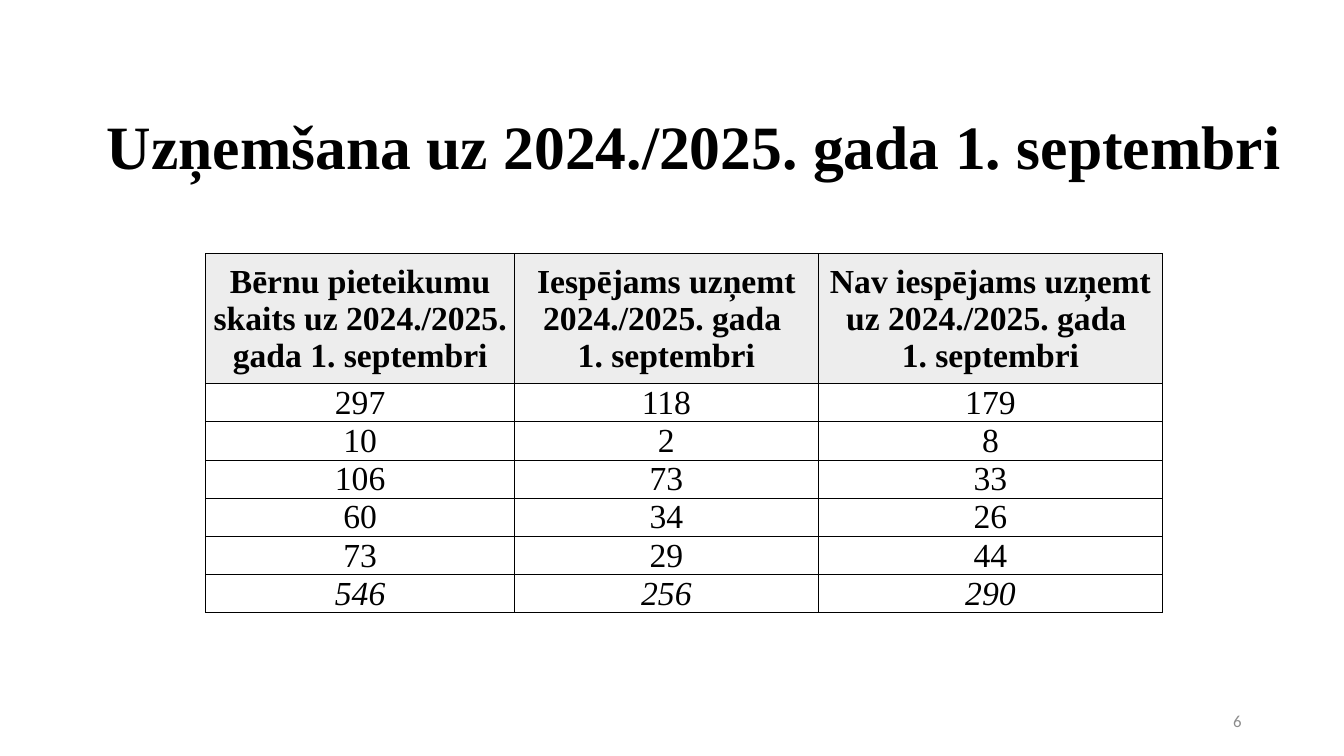
import pptx
import pptx.dml.color
import pptx.enum.text
import pptx.oxml
import pptx.oxml.ns
import pptx.util

Pt = pptx.util.Pt
ALIGN = pptx.enum.text.PP_ALIGN
MIDDLE = pptx.enum.text.MSO_ANCHOR.MIDDLE
BLACK = pptx.dml.color.RGBColor(0x00, 0x00, 0x00)
GREY = pptx.dml.color.RGBColor(0x8C, 0x8C, 0x8C)
HEADER_FILL = pptx.dml.color.RGBColor(0xED, 0xED, 0xED)
SERIF = "Times New Roman"
SANS = "Calibri"

HEADINGS = [
    "Bērnu pieteikumu skaits uz 2024./2025. gada 1. septembri",
    "Iespējams uzņemt 2024./2025. gada \n1. septembri",
    "Nav iespējams uzņemt uz 2024./2025. gada \v1. septembri",
]
ADMISSIONS = [
    (297, 118, 179),
    (10, 2, 8),
    (106, 73, 33),
    (60, 34, 26),
    (73, 29, 44),
]
TOTALS = (546, 256, 290)


def write(frame, text, font=SERIF, size=24, color=BLACK, bold=False,
          italic=False, align=ALIGN.CENTER, spacing=None):
    frame.text = text
    frame.word_wrap = True
    for paragraph in frame.paragraphs:
        paragraph.alignment = align
        paragraph.line_spacing = spacing
        for run in paragraph.runs:
            run.font.name = font
            run.font.size = Pt(size)
            run.font.color.rgb = color
            run.font.bold = bold
            run.font.italic = italic


class SlideBuilder:
    def __init__(self, presentation):
        self.slide = presentation.slides.add_slide(presentation.slide_layouts[5])
        self.border_width = Pt(0.5)

    def title(self, text, left, top, width, height):
        heading = self.slide.shapes.title
        heading.left, heading.top = Pt(left), Pt(top)
        heading.width, heading.height = Pt(width), Pt(height)
        write(heading.text_frame, text, size=44, bold=True,
              align=ALIGN.LEFT, spacing=0.9)
        heading.text_frame.vertical_anchor = MIDDLE
        heading.text_frame.auto_size = pptx.enum.text.MSO_AUTO_SIZE.NONE

    def label(self, text, left, top, width, height, **style):
        box = self.slide.shapes.add_textbox(Pt(left), Pt(top), Pt(width), Pt(height))
        write(box.text_frame, text, **style)
        box.text_frame.vertical_anchor = MIDDLE

    def border(self, cell):
        properties = cell._tc.get_or_add_tcPr()
        for side in ("lnL", "lnR", "lnT", "lnB"):
            properties.append(pptx.oxml.parse_xml(
                f'<a:{side} {pptx.oxml.ns.nsdecls("a")} w="{self.border_width}">'
                f'<a:solidFill><a:srgbClr val="{BLACK}"/></a:solidFill></a:{side}>'))

    def cell(self, cell, text, fill=None, **style):
        self.border(cell)
        cell.margin_left = cell.margin_right = cell.margin_top = Pt(0.7)
        cell.margin_bottom = 0
        cell.vertical_anchor = MIDDLE
        if fill is None:
            cell.fill.background()
        else:
            cell.fill.solid()
            cell.fill.fore_color.rgb = fill
        write(cell.text_frame, text, **style)

    def table(self, left, top, widths, header_height, row_height):
        rows = [HEADINGS, *ADMISSIONS, TOTALS]
        styles = [dict(fill=HEADER_FILL, bold=True),
                  *[{} for _ in ADMISSIONS], dict(italic=True)]
        heights = [header_height] + [row_height] * (len(rows) - 1)
        table = self.slide.shapes.add_table(
            len(rows), len(widths), Pt(left), Pt(top),
            Pt(sum(widths)), Pt(sum(heights))).table
        table.first_row = table.horz_banding = False
        for column, width in zip(table.columns, widths):
            column.width = Pt(width)
        for row, height, values, style in zip(table.rows, heights, rows, styles):
            row.height = Pt(height)
            for cell, value in zip(row.cells, values):
                self.cell(cell, str(value), **style)


def main():
    presentation = pptx.Presentation()
    presentation.slide_width, presentation.slide_height = Pt(960), Pt(540)
    admissions = SlideBuilder(presentation)
    admissions.title("Uzņemšana uz 2024./2025. gada 1. septembri", 69, 55, 855, 104)
    admissions.table(147, 181, (220.5, 217, 246), 93, 27)
    admissions.label("6", 678, 500.5, 216, 28.75, font=SANS, size=12,
                     color=GREY, align=ALIGN.RIGHT)
    presentation.save("out.pptx")


if __name__ == "__main__":
    main()
